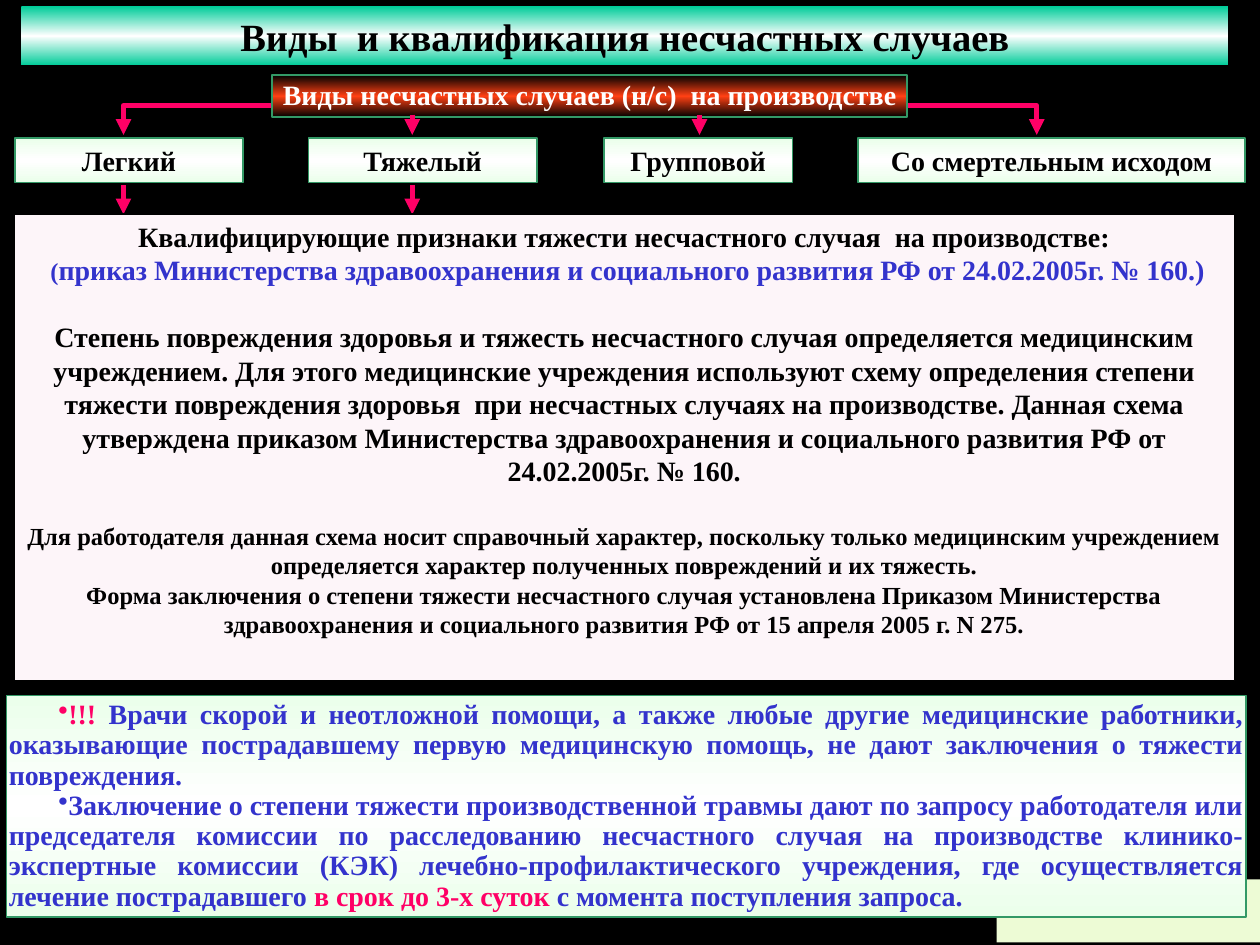
from copy import deepcopy

from lxml.etree import SubElement
from pptx import Presentation
from pptx.dml.color import RGBColor
from pptx.enum.shapes import MSO_CONNECTOR as LINK, MSO_SHAPE as FORM
from pptx.enum.text import MSO_ANCHOR as ANCHOR, MSO_AUTO_SIZE as FIT, PP_ALIGN as ALIGN
from pptx.oxml.ns import qn
from pptx.util import Cm, Pt

FONT = "Times New Roman"
COLORS = {
    "black": "000000", "white": "FFFFFF", "teal": "00CC99", "red": "FF4013",
    "green": "339966", "mint": "EBFFEB", "rose": "FDF5F9", "lime": "EDFBD5",
    "pink": "FF0066", "blue": "3333CC",
}
TIGHT = {"margin_left": Cm(0.05), "margin_right": Cm(0.05),
         "margin_top": Cm(0.1), "margin_bottom": Cm(0.1)}
WIDE = {"margin_left": Cm(0.25), "margin_right": Cm(0.25),
        "margin_top": Cm(0.13), "margin_bottom": Cm(0.13)}


def color(name):
    return RGBColor.from_string(COLORS[name])


def apply(target, values):
    for name, value in values.items():
        setattr(target, name, value)


def paint(shape, fill, line=None):
    if isinstance(fill, str):
        shape.fill.solid()
        shape.fill.fore_color.rgb = color(fill)
    else:
        shape.fill.gradient()
        shape.fill.gradient_angle = 90
        stops = next(shape._element.iter(qn("a:gsLst")))
        stops.append(deepcopy(stops[0]))
        for index, stop in enumerate(shape.fill.gradient_stops):
            stop.position = index / 2
            stop.color.rgb = color(fill[index % 2])
    if line:
        shape.line.color.rgb = color(line)
        shape.line.width = Pt(1)
    else:
        shape.line.fill.background()


def add_panel(page, box, fill, line=None):
    shape = page.shapes.add_shape(FORM.RECTANGLE, *map(Cm, box))
    shape.shadow.inherit = False
    paint(shape, fill, line)
    return shape


def write(shape, paragraphs, anchor=ANCHOR.MIDDLE, margins=TIGHT):
    frame = shape.text_frame
    apply(frame, {"word_wrap": True, "auto_size": FIT.NONE, "vertical_anchor": anchor, **margins})
    for index, (spans, layout, bullet) in enumerate(paragraphs):
        para = frame.paragraphs[0] if index == 0 else frame.add_paragraph()
        apply(para, {"alignment": ALIGN.CENTER, **layout})
        if bullet:
            add_bullet(para, bullet)
        for text, size, shade in spans:
            span = para.add_run()
            span.text = text
            apply(span.font, {"name": FONT, "size": Pt(size), "bold": True})
            span.font.color.rgb = color(shade)


def add_bullet(para, shade):
    props = para._p.get_or_add_pPr()
    props.set("marL", "0")
    props.set("indent", str(Cm(1)))
    tint = SubElement(props, qn("a:buClr"))
    SubElement(tint, qn("a:srgbClr"), val=COLORS[shade])
    SubElement(props, qn("a:buChar"), char="•")


def style_arrow(arrow):
    arrow.line.color.rgb = color("pink")
    arrow.line.width = Pt(3)
    SubElement(arrow.line._get_or_add_ln(), qn("a:tailEnd"), type="triangle")


def add_arrow(page, x, top, bottom):
    arrow = page.shapes.add_connector(LINK.STRAIGHT, Cm(x), Cm(top), Cm(x), Cm(bottom))
    style_arrow(arrow)
    SubElement(arrow._element.spPr, qn("a:effectLst"))


def add_elbow(page, start, x, top, bottom):
    builder = page.shapes.build_freeform(Cm(start), Cm(top))
    builder.add_line_segments([(Cm(x), Cm(top)), (Cm(x), Cm(bottom))], close=False)
    elbow = builder.convert_to_shape()
    elbow.shadow.inherit = False
    elbow.fill.background()
    style_arrow(elbow)


def add_title(page, box):
    title = page.shapes.title
    apply(title, dict(zip(("left", "top", "width", "height"), map(Cm, box))))
    paint(title, ("teal", "white"))
    spans = [("Виды  и квалификация несчастных случаев", 22, "black")]
    write(title, [(spans, {}, None)], ANCHOR.TOP, WIDE)


def add_classification(page, box):
    left, top, width, height = box
    kinds = [
        ("Легкий", 0, 4.6, 2.19), ("Тяжелый", 5.92, 4.6, 8.01),
        ("Групповой", 11.87, 3.81, 13.8), ("Со смертельным исходом", 17, 7.8, 20.6),
    ]
    row, end = top + 1.27, top + 1.2
    add_elbow(page, left + 5.8, left + kinds[0][3], top + 0.61, end)
    add_elbow(page, left + 17.2, left + kinds[-1][3], top + 0.61, end)
    banner = add_panel(page, (left + 5.19, top, 12.8, 0.84), ("black", "red"), "green")
    spans = [("Виды несчастных случаев (н/с)  на производстве", 16, "white")]
    write(banner, [(spans, {"line_spacing": 0.95}, None)])
    for text, offset, size, _ in kinds:
        kind = add_panel(page, (left + offset, row, size, 0.89), ("mint", "white"), "green")
        write(kind, [([(text, 16, "black")], {}, None)])
    for *_, x in kinds[1:3]:
        add_arrow(page, left + x, top + 0.79, end)
    for *_, x in kinds[:2]:
        add_arrow(page, left + x, row + 0.94, top + height)


def add_criteria(page, box):
    gap = {"space_before": Pt(19)}
    write(add_panel(page, box, "rose", "black"), [
        ([("Квалифицирующие признаки тяжести несчастного случая  на производстве:", 16, "black")], {}, None),
        ([(" ", 16, "black"), ("(", 14, "blue"),
          ("приказ Министерства здравоохранения и социального развития РФ от 24.02.2005г. № 160.)",
           16, "blue")], {}, None),
        ([("Степень повреждения здоровья и тяжесть несчастного случая определяется медицинским "
           "учреждением. Для этого медицинские учреждения используют схему определения степени "
           "тяжести повреждения здоровья  при несчастных случаях на производстве. Данная схема "
           "утверждена приказом Министерства здравоохранения и социального развития РФ от "
           "24.02.2005г. № 160.", 16, "black")], gap, None),
        ([("Для работодателя данная схема носит справочный характер, поскольку только медицинским "
           "учреждением определяется характер полученных повреждений и их тяжесть.",
           14, "black")], gap, None),
        ([("Форма заключения о степени тяжести несчастного случая установлена Приказом Министерства "
           "здравоохранения и социального развития РФ от 15 апреля 2005 г. N 275.",
           14, "black")], {}, None),
    ], ANCHOR.TOP)


def add_warning(page, box):
    layout = {"alignment": ALIGN.JUSTIFY, "line_spacing": 0.9}
    write(add_panel(page, box, ("mint", "white"), "green"), [
        ([("!!! ", 16, "pink"),
          ("Врачи скорой и неотложной помощи, а также любые другие медицинские работники, "
           "оказывающие пострадавшему первую медицинскую помощь, не дают заключения о тяжести "
           "повреждения.", 16, "blue")], layout, "pink"),
        ([("Заключение о степени тяжести производственной травмы дают по запросу работодателя или "
           "председателя комиссии по расследованию несчастного случая на производстве "
           "клинико-экспертные комиссии (КЭК) лечебно-профилактического учреждения, где "
           "осуществляется лечение пострадавшего ", 16, "blue"),
          ("в срок до 3-х суток ", 16, "pink"),
          ("с момента поступления запроса.", 16, "blue")], layout, "blue"),
    ])


def main():
    deck = Presentation()
    deck.slide_width, deck.slide_height = Cm(25.4), Cm(19.05)
    page = deck.slides.add_slide(deck.slide_layouts[5])
    page.background.fill.solid()
    page.background.fill.fore_color.rgb = color("black")
    add_panel(page, (20.09, 17.73, 5.31, 1.27), "lime")
    add_title(page, (0.43, 0.13, 24.33, 1.19))
    add_classification(page, (0.3, 1.52, 24.8, 2.8))
    add_criteria(page, (0.28, 4.32, 24.61, 9.4))
    add_warning(page, (0.13, 14.02, 24.99, 4.47))
    deck.save("out.pptx")


if __name__ == "__main__":
    main()
